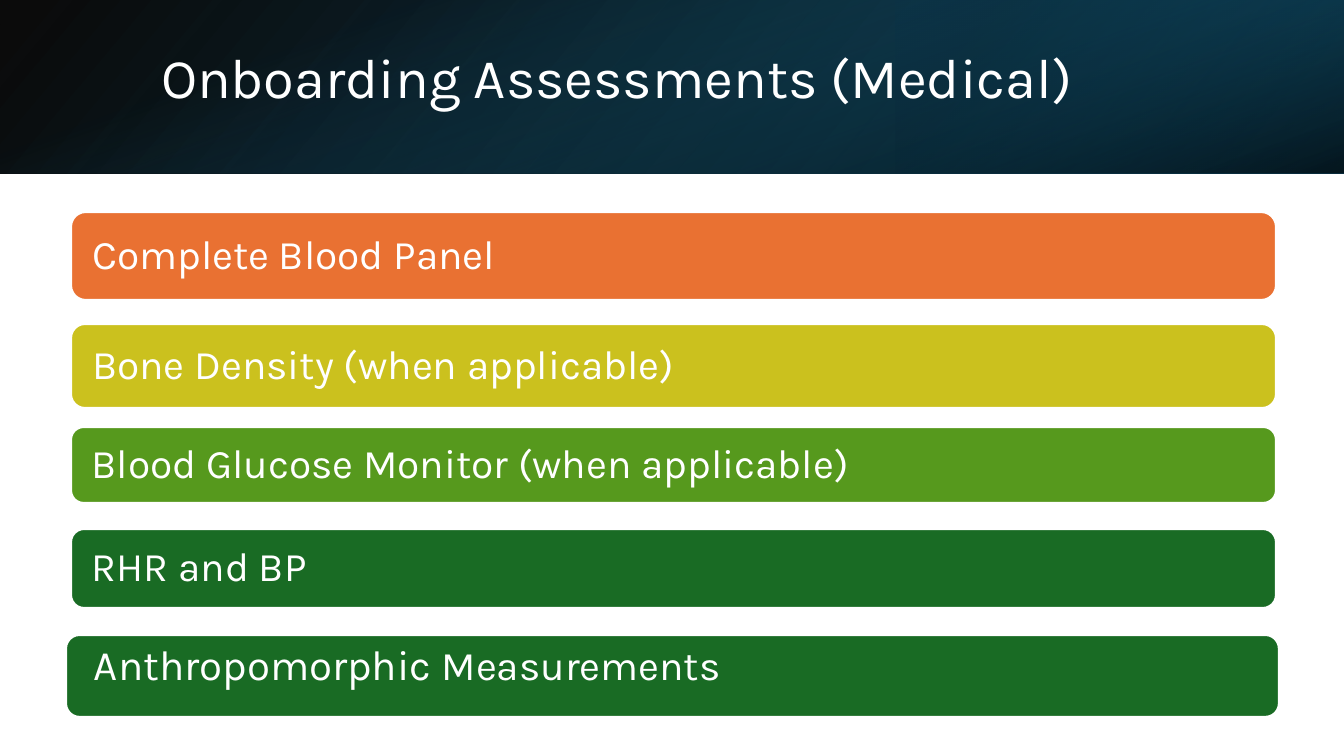
from lxml.etree import SubElement
from pptx import Presentation
from pptx.dml.color import RGBColor
from pptx.enum.shapes import MSO_SHAPE
from pptx.enum.text import MSO_ANCHOR, MSO_AUTO_SIZE, PP_ALIGN
from pptx.oxml.ns import qn
from pptx.util import Pt

PX = 914400 * 10 // 1008
WHITE = RGBColor(0xFF, 0xFF, 0xFF)
BLACK = RGBColor(0x00, 0x00, 0x00)
NIGHT = RGBColor(0x0B, 0x30, 0x41)
DEEP_BLUE = RGBColor(0x10, 0x48, 0x62)
BLUE = RGBColor(0x15, 0x60, 0x82)
ORANGE = RGBColor(0xE9, 0x71, 0x32)
YELLOW = RGBColor(0xCB, 0xC1, 0x1E)
LIGHT_GREEN = RGBColor(0x56, 0x99, 0x1D)
GREEN = RGBColor(0x19, 0x6B, 0x24)


def write_text(shape, runs, left=10, right=10, bottom=0):
    """Fill a shape with one line made of (text, point size) runs."""
    frame = shape.text_frame
    frame.word_wrap = True
    frame.auto_size = MSO_AUTO_SIZE.NONE
    frame.vertical_anchor = MSO_ANCHOR.MIDDLE
    frame.margin_left, frame.margin_right = left * PX, right * PX
    frame.margin_top, frame.margin_bottom = 0, bottom * PX
    line = frame.paragraphs[0]
    line.alignment = PP_ALIGN.LEFT
    line.line_spacing = 0.9
    for text, size in runs:
        run = line.add_run()
        run.text = text
        run.font.name = "Karla"
        run.font.size = Pt(size)
        run.font.color.rgb = WHITE


def add_block(kind, left, top, width, height):
    block = slide.shapes.add_shape(kind, left * PX, top * PX, width * PX, height * PX)
    block.shadow.inherit = False
    return block


deck = Presentation()
deck.slide_width, deck.slide_height = 1344 * PX, 756 * PX
slide = deck.slides.add_slide(deck.slide_layouts[5])

# Header: three gradients; stops are (position %, colour, opacity %)
header_layers = [
    (0, 1344, 40, [(0, BLACK, 96), (100, DEEP_BLUE, 100)]),
    (896, 448, 40, [(19, NIGHT, 68), (100, BLUE, 79)]),
    (0, 1344, 70, [(23, BLUE, 0), (99, BLACK, 74)]),
]
for left, width, angle, stops in header_layers:
    layer = add_block(MSO_SHAPE.RECTANGLE, left, 0, width, 174)
    layer.line.fill.background()
    layer.fill.gradient()
    layer.fill.gradient_angle = 360 - angle
    for stop, (position, color, opacity) in zip(layer.fill.gradient_stops, stops):
        stop.position = position / 100
        stop.color.rgb = color
    colors = layer._element.spPr.iter(qn("a:srgbClr"))
    for color_xml, (position, color, opacity) in zip(colors, stops):
        SubElement(color_xml, qn("a:alpha"), val=str(opacity * 1000))

title = slide.shapes.title
title.left, title.top, title.width, title.height = 151 * PX, 38 * PX, 1107 * PX, 85 * PX
write_text(title, [("Onboarding Assessments (Medical)", 40)])
slide.shapes._spTree.append(title._element)  # bring the title in front of the header

assessments = [
    (71, 212, 1205, 88, ORANGE, [("Complete Blood Panel", 29)], 17, 0),
    (71, 324, 1205, 84, YELLOW, [("Bone Density (when applicable)", 29)], 17, 0),
    (71, 427, 1205, 76, LIGHT_GREEN, [("Blood Glucose Monitor (when applicable)", 29)], 17, 0),
    (71, 529, 1205, 79, GREEN, [("RHR and BP", 29)], 17, 0),
    (66, 635, 1213, 82, GREEN, [("Anthropomorphic ", 30), ("Measurements", 29)], 24, 18),
]
for left, top, width, height, color, runs, indent, lift in assessments:
    bar = add_block(MSO_SHAPE.ROUNDED_RECTANGLE, left, top, width, height)
    bar.fill.solid()
    bar.fill.fore_color.rgb = color
    bar.line.color.rgb = WHITE
    bar.line.width = Pt(1.5)
    write_text(bar, runs, left=indent, right=indent, bottom=lift)

deck.save("out.pptx")
